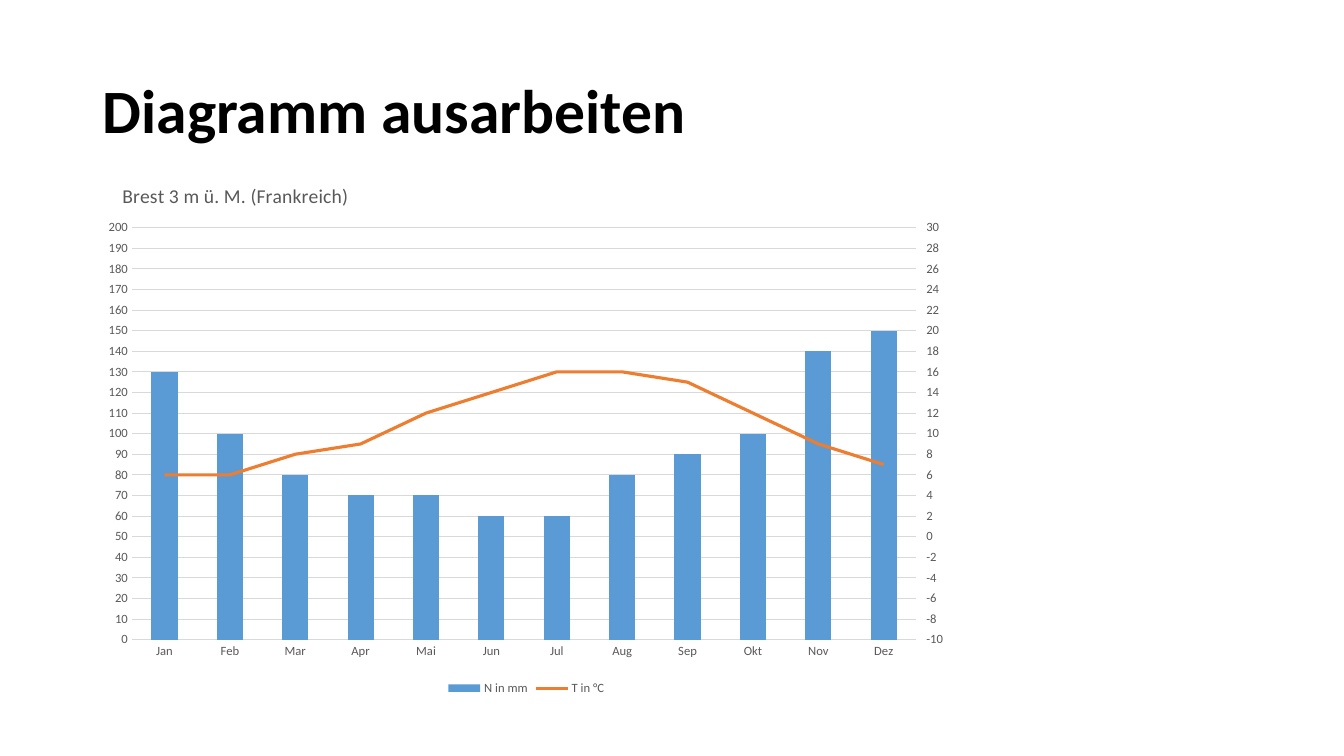
from pptx import Presentation
from pptx.chart import axis, data
from pptx.dml.color import RGBColor
from pptx.enum import chart as ch, text
from pptx.oxml import parse_xml
from pptx.oxml.ns import nsdecls, qn
from pptx.util import Inches, Pt

TITLE = "Diagramm ausarbeiten"
CHART_TITLE = "Brest 3 m ü. M. (Frankreich)"
MONTHS = ["Jan", "Feb", "Mar", "Apr", "Mai", "Jun",
          "Jul", "Aug", "Sep", "Okt", "Nov", "Dez"]
RAIN = ("N in mm", [130, 100, 80, 70, 70, 60, 60, 80, 90, 100, 140, 150])
TEMPERATURE = ("T in °C", [6, 6, 8, 9, 12, 14, 16, 16, 15, 12, 9, 7])
BLUE, ORANGE, GREY, GRID = "5B9BD5", "ED7D31", "595959", "D9D9D9"
RAIN_SCALE = dict(minimum_scale=0, maximum_scale=200, major_unit=10)
TEMPERATURE_SCALE = dict(minimum_scale=-10, maximum_scale=30, major_unit=2)
TITLE_BOX = (0.92, 0.4, 11.5, 1.45)
CHART_BOX = (0.92, 1.56, 8.6, 5.38)
TITLE_LAYOUT = dict(xMode="edge", yMode="edge", x=0.03, y=0.04)
PLOT_LAYOUT = dict(layoutTarget="inner", xMode="edge", yMode="edge",
                   x=0.045, y=0.13, w=0.905, h=0.76)

LINE_CHART = f"""<c:lineChart {nsdecls('c')}><c:grouping val="standard"/>
<c:varyColors val="0"/><c:marker val="1"/><c:axId val="501"/><c:axId val="502"/>
</c:lineChart>"""
RIGHT_AXIS = f"""<c:valAx {nsdecls('c')}><c:axId val="502"/>
<c:scaling><c:orientation val="minMax"/></c:scaling><c:delete val="0"/>
<c:axPos val="r"/><c:numFmt formatCode="General" sourceLinked="0"/>
<c:majorTickMark val="out"/><c:minorTickMark val="none"/>
<c:tickLblPos val="nextTo"/><c:crossAx val="501"/><c:crosses val="max"/>
<c:crossBetween val="between"/></c:valAx>"""
HIDDEN_MONTHS = f"""<c:catAx {nsdecls('c')}><c:axId val="501"/>
<c:scaling><c:orientation val="minMax"/></c:scaling><c:delete val="1"/>
<c:axPos val="b"/><c:majorTickMark val="none"/><c:minorTickMark val="none"/>
<c:tickLblPos val="nextTo"/><c:crossAx val="502"/><c:crosses val="autoZero"/>
</c:catAx>"""


def rgb(value):
    return RGBColor.from_string(value)


def set_font(font, size, color, bold=False):
    for name, value in dict(name="Calibri", size=Pt(size), bold=bold).items():
        setattr(font, name, value)
    font.color.rgb = rgb(color)


def set_line(line, color, width):
    line.color.rgb = rgb(color)
    line.width = Pt(width)


def set_layout(parent, index, values):
    """Give a chart part a manual layout, as fractions of the chart."""
    for old in parent.findall(qn("c:layout")):
        parent.remove(old)
    items = "".join(f'<c:{k} val="{v}"/>' for k, v in values.items())
    parent.insert(index, parse_xml(
        f"<c:layout {nsdecls('c')}><c:manualLayout>{items}</c:manualLayout></c:layout>"))


def set_scale(ax, scale):
    for name, value in scale.items():
        setattr(ax, name, value)
    set_font(ax.tick_labels.font, 9, GREY)
    ax.format.line.fill.background()


def move_to_right_axis(chart):
    """Turn the last column series into a line on a second value axis."""
    plot_area = chart.element.xpath("c:chart/c:plotArea")[0]
    bars = plot_area.find(qn("c:barChart"))
    series = bars.findall(qn("c:ser"))[-1]
    for flag in series.findall(qn("c:invertIfNegative")):
        series.remove(flag)
    lines = parse_xml(LINE_CHART)
    lines.insert(2, series)
    bars.addnext(lines)
    right = parse_xml(RIGHT_AXIS)
    plot_area.find(qn("c:valAx")).addnext(right)
    right.addnext(parse_xml(HIDDEN_MONTHS))
    set_layout(plot_area, 0, PLOT_LAYOUT)
    return axis.ValueAxis(right)


def add_climate_chart(slide):
    cd = data.CategoryChartData()
    cd.categories = MONTHS
    for name, values in (RAIN, TEMPERATURE):
        cd.add_series(name, values)
    chart = slide.shapes.add_chart(ch.XL_CHART_TYPE.COLUMN_CLUSTERED,
                                   *map(Inches, CHART_BOX), cd).chart
    set_font(chart.font, 10, "000000")

    p = chart.chart_title.text_frame.paragraphs[0]
    r = p.add_run()
    r.text = CHART_TITLE
    set_font(r.font, 14, GREY)
    set_layout(chart.element.xpath("c:chart/c:title")[0], 1, TITLE_LAYOUT)

    chart.has_legend = True
    chart.legend.position = ch.XL_LEGEND_POSITION.BOTTOM
    chart.legend.include_in_layout = False
    set_font(chart.legend.font, 9, GREY)

    months, rain = chart.category_axis, chart.value_axis
    for ax in (months, rain):
        ax.major_tick_mark = ch.XL_TICK_MARK.NONE
    set_font(months.tick_labels.font, 9, GREY)
    set_line(months.format.line, GRID, 0.75)
    set_scale(rain, RAIN_SCALE)
    set_line(rain.major_gridlines.format.line, GRID, 0.75)
    set_scale(move_to_right_axis(chart), TEMPERATURE_SCALE)

    columns, lines = chart.plots
    columns.gap_width = 150
    columns.vary_by_categories = False
    fill = columns.series[0].format.fill
    fill.solid()
    fill.fore_color.rgb = rgb(BLUE)
    curve = lines.series[0]
    curve.smooth = False
    curve.marker.style = ch.XL_MARKER_STYLE.NONE
    set_line(curve.format.line, ORANGE, 2.25)


def main():
    prs = Presentation()
    prs.slide_width, prs.slide_height = Inches(13.33), Inches(7.5)
    slide = prs.slides.add_slide(prs.slide_layouts[5])
    sp = slide.shapes.title
    sp.left, sp.top, sp.width, sp.height = map(Inches, TITLE_BOX)
    tf = sp.text_frame
    tf.text = TITLE
    tf.vertical_anchor = text.MSO_ANCHOR.MIDDLE
    p = tf.paragraphs[0]
    p.alignment = text.PP_ALIGN.LEFT
    p.line_spacing = 0.9
    set_font(p.runs[0].font, 44, "000000", bold=True)
    add_climate_chart(slide)
    prs.save("out.pptx")


if __name__ == "__main__":
    main()
